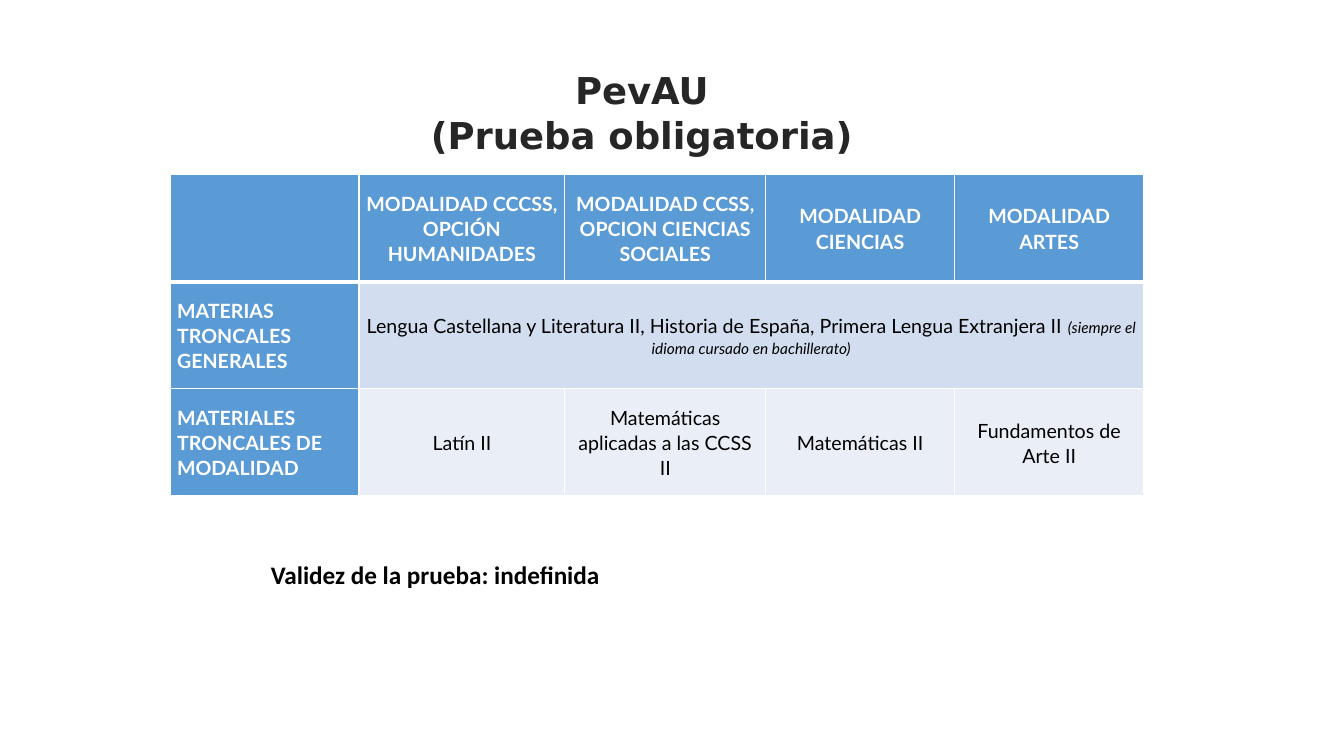
from dataclasses import dataclass

from lxml.etree import SubElement
from pptx import Presentation
from pptx.dml.color import RGBColor
from pptx.enum.text import MSO_ANCHOR, MSO_AUTO_SIZE, PP_ALIGN
from pptx.oxml import parse_xml
from pptx.oxml.ns import nsdecls, qn
from pptx.util import Pt


@dataclass(frozen=True)
class Theme:
    blue: str = "5B9BD5"
    mid_blue: str = "D2DEEF"
    pale_blue: str = "EAEFF7"
    white: str = "FFFFFF"
    black: str = "000000"
    title_color: str = "262626"
    title_font: str = "DejaVu Sans"
    table_font: str = "Lato"
    note_font: str = "Calibri"
    title_size: float = 26.4
    note_size: float = 18
    table_size: float = 14
    aside_size: float = 11
    thin: float = 1
    thick: float = 3


THEME = Theme()
LINE_SPACING = 1.07
COLUMN_WIDTHS = (135, 147, 143.5, 135, 135)
ROW_HEIGHT = 76.5

HEADERS = (
    "",
    "MODALIDAD CCCSS, OPCIÓN HUMANIDADES",
    "MODALIDAD CCSS, OPCION CIENCIAS SOCIALES",
    "MODALIDAD CIENCIAS",
    "MODALIDAD ARTES",
)
ROW_LABELS = (
    ("MATERIAS TRONCALES", "GENERALES"),
    ("MATERIALES TRONCALES DE", "MODALIDAD"),
)
COMMON_SUBJECTS = "Lengua Castellana y Literatura II, Historia de España, Primera Lengua Extranjera II "
LANGUAGE_ASIDE = "(siempre el idioma cursado en bachillerato)"
SUBJECTS = (
    "Latín II",
    "Matemáticas aplicadas a las CCSS II",
    "Matemáticas II",
    "Fundamentos de Arte II",
)


def add_span(para, text, font, size, color, bold=False, italic=False):
    span = para.add_run()
    span.text = text
    span.font.name = font
    span.font.size = Pt(size)
    span.font.bold = bold
    span.font.italic = italic
    span.font.color.rgb = RGBColor.from_string(color)


def add_paragraphs(frame, lines, font, size, color, bold, align, spacing=None):
    for index, line in enumerate(lines):
        para = frame.paragraphs[0] if index == 0 else frame.add_paragraph()
        para.alignment = align
        if spacing:
            para.line_spacing = spacing
        if line:
            add_span(para, line, font, size, color, bold)


def add_text_box(page, left, top, width, height):
    box = page.shapes.add_textbox(Pt(left), Pt(top), Pt(width), Pt(height))
    box.text_frame.word_wrap = True
    return box.text_frame


def set_borders(cell, top, bottom):
    properties = cell._tc.get_or_add_tcPr()
    widths = {"lnL": THEME.thin, "lnR": THEME.thin, "lnT": top, "lnB": bottom}
    for index, (side, width) in enumerate(widths.items()):
        line = parse_xml(f'<a:{side} {nsdecls("a")} w="{Pt(width)}"/>')
        fill = SubElement(line, qn("a:solidFill"))
        SubElement(fill, qn("a:srgbClr"), val=THEME.white)
        properties.insert(index, line)


def fill_cell(cell, lines, color, text_color, bold=False, align=PP_ALIGN.CENTER):
    cell.fill.solid()
    cell.fill.fore_color.rgb = RGBColor.from_string(color)
    cell.vertical_anchor = MSO_ANCHOR.MIDDLE
    cell.margin_left = cell.margin_right = Pt(5)
    cell.margin_top = cell.margin_bottom = Pt(0)
    add_paragraphs(cell.text_frame, lines, THEME.table_font, THEME.table_size,
                   text_color, bold, align, LINE_SPACING)


def add_subject_table(page):
    row_count = 1 + len(ROW_LABELS)
    table = page.shapes.add_table(
        row_count, len(COLUMN_WIDTHS), Pt(121.5), Pt(124.75),
        Pt(sum(COLUMN_WIDTHS)), Pt(ROW_HEIGHT * row_count)).table
    for column, width in zip(table.columns, COLUMN_WIDTHS):
        column.width = Pt(width)
    for row in table.rows:
        row.height = Pt(ROW_HEIGHT)

    # Header row and row labels
    for index, header in enumerate(HEADERS):
        fill_cell(table.cell(0, index), [header], THEME.blue, THEME.white, bold=True)
    for index, label in enumerate(ROW_LABELS, start=1):
        fill_cell(table.cell(index, 0), label, THEME.blue, THEME.white,
                  bold=True, align=PP_ALIGN.LEFT)

    # Subjects shared by every branch
    shared = table.cell(1, 1)
    shared.merge(table.cell(1, len(COLUMN_WIDTHS) - 1))
    fill_cell(shared, [COMMON_SUBJECTS], THEME.mid_blue, THEME.black)
    add_span(shared.text_frame.paragraphs[0], LANGUAGE_ASIDE, THEME.table_font,
             THEME.aside_size, THEME.black, italic=True)

    # Subjects of each branch
    for index, subject in enumerate(SUBJECTS, start=1):
        fill_cell(table.cell(2, index), [subject], THEME.pale_blue, THEME.black)

    # White grid, heavier under the header
    for index in range(row_count):
        top = THEME.thick if index == 1 else THEME.thin
        bottom = THEME.thick if index == 0 else THEME.thin
        for cell in table.rows[index].cells:
            set_borders(cell, top, bottom)


def main():
    deck = Presentation()
    deck.slide_width, deck.slide_height = Pt(960), Pt(540)
    page = deck.slides.add_slide(deck.slide_layouts[6])

    # Title
    title = add_text_box(page, 99.5, 45, 718, 57.5)
    add_paragraphs(title, ["PevAU", "(Prueba obligatoria)"], THEME.title_font,
                   THEME.title_size, THEME.title_color, True, PP_ALIGN.CENTER)

    add_subject_table(page)

    # Validity note
    note = add_text_box(page, 186.5, 394.5, 647.5, 29.5)
    note.auto_size = MSO_AUTO_SIZE.SHAPE_TO_FIT_TEXT
    add_paragraphs(note, ["Validez de la prueba: indefinida"], THEME.note_font,
                   THEME.note_size, THEME.black, True, PP_ALIGN.LEFT, LINE_SPACING)
    note.paragraphs[0].space_after = Pt(8)

    deck.save("out.pptx")


if __name__ == "__main__":
    main()
